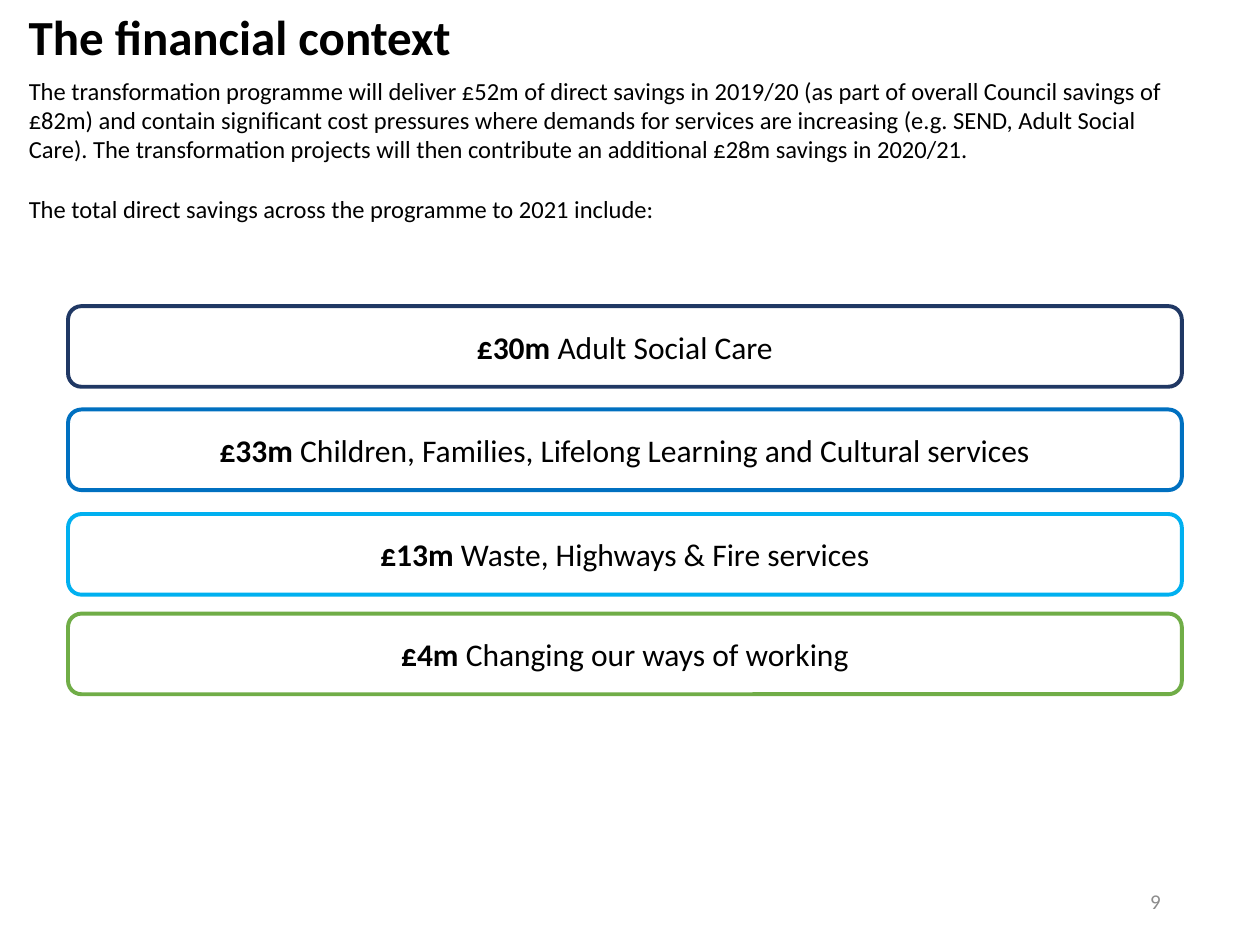
"""Build the slide on the financial context of the transformation programme."""
from dataclasses import dataclass

from pptx import Presentation
from pptx.dml.color import RGBColor
from pptx.enum.shapes import MSO_SHAPE
from pptx.enum.text import MSO_ANCHOR, PP_ALIGN
from pptx.util import Inches, Pt


@dataclass(frozen=True)
class Theme:
    font: str = "Calibri"
    text: str = "000000"
    muted: str = "8C8C8C"
    background: str = "FFFFFF"
    adults: str = "203864"
    children: str = "0070C0"
    highways: str = "00B0F0"
    working: str = "70AD47"
    title_size: float = 28
    body_size: float = 14
    card_size: float = 18
    number_size: float = 12
    paragraph_gap: float = 17
    outline: float = 2.25


class SlideBuilder:
    def __init__(self, slide, theme):
        self.slide = slide
        self.theme = theme

    def add_text(self, paragraph, text, size, color=None, bold=False):
        font_format = {"name": self.theme.font, "size": Pt(size), "bold": bold}
        run = paragraph.add_run()
        run.text = text
        for name, value in font_format.items():
            setattr(run.font, name, value)
        run.font.color.rgb = RGBColor.from_string(color or self.theme.text)

    def prepare_frame(self, shape, anchor):
        frame = shape.text_frame
        for name, value in {"word_wrap": True, "vertical_anchor": anchor}.items():
            setattr(frame, name, value)
        return frame

    def text_box(self, box, paragraphs, size, color=None, bold=False,
                 align=PP_ALIGN.LEFT, anchor=MSO_ANCHOR.TOP):
        shape = self.slide.shapes.add_textbox(*map(Inches, box))
        frame = self.prepare_frame(shape, anchor)
        for index, text in enumerate(paragraphs):
            paragraph = frame.add_paragraph() if index else frame.paragraphs[0]
            paragraph.alignment = align
            if index:
                paragraph.space_before = Pt(self.theme.paragraph_gap)
            self.add_text(paragraph, text, size, color, bold)

    def saving_card(self, box, amount, service, color):
        shape = self.slide.shapes.add_shape(MSO_SHAPE.ROUNDED_RECTANGLE, *map(Inches, box))
        shape.shadow.inherit = False
        shape.fill.solid()
        shape.fill.fore_color.rgb = RGBColor.from_string(self.theme.background)
        shape.line.color.rgb = RGBColor.from_string(color)
        shape.line.width = Pt(self.theme.outline)
        paragraph = self.prepare_frame(shape, MSO_ANCHOR.MIDDLE).paragraphs[0]
        paragraph.alignment = PP_ALIGN.CENTER
        self.add_text(paragraph, f"{amount} ", self.theme.card_size, bold=True)
        self.add_text(paragraph, service, self.theme.card_size)


def main():
    presentation = Presentation()
    presentation.slide_width = Inches(10)
    presentation.slide_height = Inches(7.5)
    slide = presentation.slides.add_slide(presentation.slide_layouts[6])
    theme = Theme()
    builder = SlideBuilder(slide, theme)

    builder.text_box((0.13, 0, 4.33, 0.57), ["The financial context"],
                     theme.title_size, bold=True)
    introduction = [
        "The transformation programme will deliver £52m of direct savings in 2019/20 "
        "(as part of overall Council savings of £82m) and contain significant cost "
        "pressures where demands for services are increasing (e.g. SEND, Adult Social "
        "Care). The transformation projects will then contribute an additional £28m "
        "savings in 2020/21.",
        "The total direct savings across the programme to 2021 include:",
    ]
    builder.text_box((0.13, 0.55, 9.29, 1.28), introduction, theme.body_size)

    savings = [
        (2.43, "£30m", "Adult Social Care", theme.adults),
        (3.25, "£33m", "Children, Families, Lifelong Learning and Cultural services",
         theme.children),
        (4.08, "£13m", "Waste, Highways & Fire services", theme.highways),
        (4.87, "£4m", "Changing our ways of working", theme.working),
    ]
    for top, amount, service, color in savings:
        builder.saving_card((0.54, top, 8.84, 0.64), amount, service, color)

    builder.text_box((7.06, 6.95, 2.25, 0.4), ["9"], theme.number_size, theme.muted,
                     align=PP_ALIGN.RIGHT, anchor=MSO_ANCHOR.MIDDLE)
    presentation.save("out.pptx")


if __name__ == "__main__":
    main()
